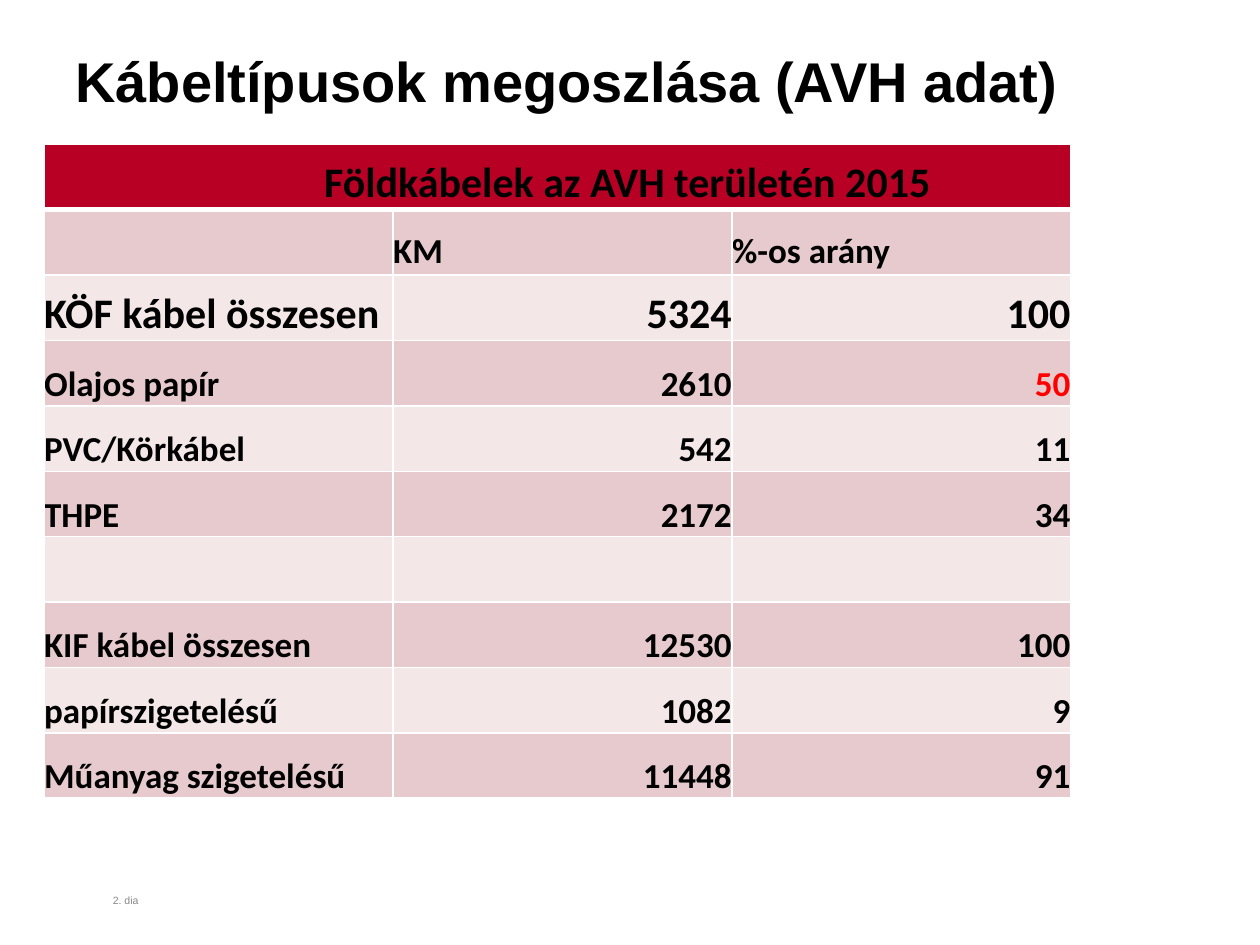
"""Build the slide on the distribution of cable types."""
from pptx import Presentation, util as u
from pptx.dml.color import RGBColor
from pptx.enum import text
from pptx.oxml import parse_xml
from pptx.oxml.ns import nsdecls

Pt = u.Pt
BLACK = RGBColor(0, 0, 0)
GREY = RGBColor(0x88, 0x88, 0x88)
RED = RGBColor(0xFF, 0, 0)
CRIMSON = RGBColor(0xB8, 0, 0x25)
BANDS = [RGBColor(0xF3, 0xE7, 0xE8), RGBColor(0xE6, 0xCA, 0xCD)]
HEADING_ROWS = (0, 2)
ROWS = [
    ("Földkábelek az AVH területén 2015", "", ""),
    ("", "KM", "%-os arány"),
    ("KÖF kábel összesen", "5324", "100"),
    ("Olajos papír", "2610", "50"),
    ("PVC/Körkábel", "542", "11"),
    ("THPE", "2172", "34"),
    ("", "", ""),
    ("KIF kábel összesen", "12530", "100"),
    ("papírszigetelésű", "1082", "9"),
    ("Műanyag szigetelésű", "11448", "91"),
]


def write(frame, words, face, size, color, bold):
    frame.text = words
    line = frame.paragraphs[0]
    for key, value in {"name": face, "size": Pt(size), "bold": bold}.items():
        setattr(line.font, key, value)
    line.font.color.rgb = color
    return line


def add_border(cell, side, width):
    cell._tc.get_or_add_tcPr().append(parse_xml(
        f'<a:ln{side} {nsdecls("a")} w="{Pt(width)}"><a:solidFill>'
        f'<a:srgbClr val="FFFFFF"/></a:solidFill></a:ln{side}>'))


deck = Presentation()
deck.slide_width, deck.slide_height = Pt(720), Pt(540)
slide = deck.slides.add_slide(deck.slide_layouts[5])

title = slide.shapes.title
footer = slide.shapes.add_textbox(0, 0, 0, 0)
labels = [
    (title, (42, 26.5, 656, 39.5), "Kábeltípusok megoszlása (AVH adat)", 32, BLACK, True),
    (footer, (63.5, 511, 30, 9), "2. dia", 6, GREY, False),
]
for label, box, words, size, color, bold in labels:
    for key, value in zip(("left", "top", "width", "height"), box):
        setattr(label, key, Pt(value))
    frame = label.text_frame
    layout = {"margin_left": 0, "margin_top": 0, "margin_right": 0, "margin_bottom": 0,
              "word_wrap": True, "auto_size": text.MSO_AUTO_SIZE.NONE,
              "vertical_anchor": text.MSO_ANCHOR.TOP}
    for key, value in layout.items():
        setattr(frame, key, value)
    line = write(frame, words, "Arial", size, color, bold)
    line.alignment = text.PP_ALIGN.LEFT
    line._p.get_or_add_pPr().set("marL", str(Pt(1)))

cables = slide.shapes.add_table(len(ROWS), 3, Pt(25.2), Pt(82.5), Pt(586.5), Pt(373.7)).table
cables.horz_banding = False
for column, width in zip(cables.columns, (199.5, 193.5, 193.5)):
    column.width = Pt(width)

for r, values in enumerate(ROWS):
    cables.rows[r].height = Pt(37.37)
    heading = r in HEADING_ROWS
    inset = 7.5 if heading else 11.7 if r == 1 else 12.8
    for c, value in enumerate(values):
        cell = cables.cell(r, c)
        for side in "LRTB":
            thick = (r, side) in ((0, "B"), (1, "T"))
            add_border(cell, side, 3 if thick else 1)
        margins = {"margin_left": 0, "margin_right": 0, "margin_bottom": 0,
                   "margin_top": Pt(inset)}
        for key, margin in margins.items():
            setattr(cell, key, margin)
        cell.fill.solid()
        cell.fill.fore_color.rgb = CRIMSON if r == 0 else BANDS[r % 2]
        color = RED if value == "50" else BLACK
        line = write(cell.text_frame, value, "Calibri", 24 if heading else 20, color, True)
        numeric = c > 0 and r > 1
        line.alignment = text.PP_ALIGN.RIGHT if numeric else text.PP_ALIGN.LEFT

banner = cables.cell(0, 0)
banner.merge(cables.cell(0, 2))
banner.text_frame.paragraphs[0]._p.get_or_add_pPr().set("marL", str(Pt(160)))

deck.save("out.pptx")
